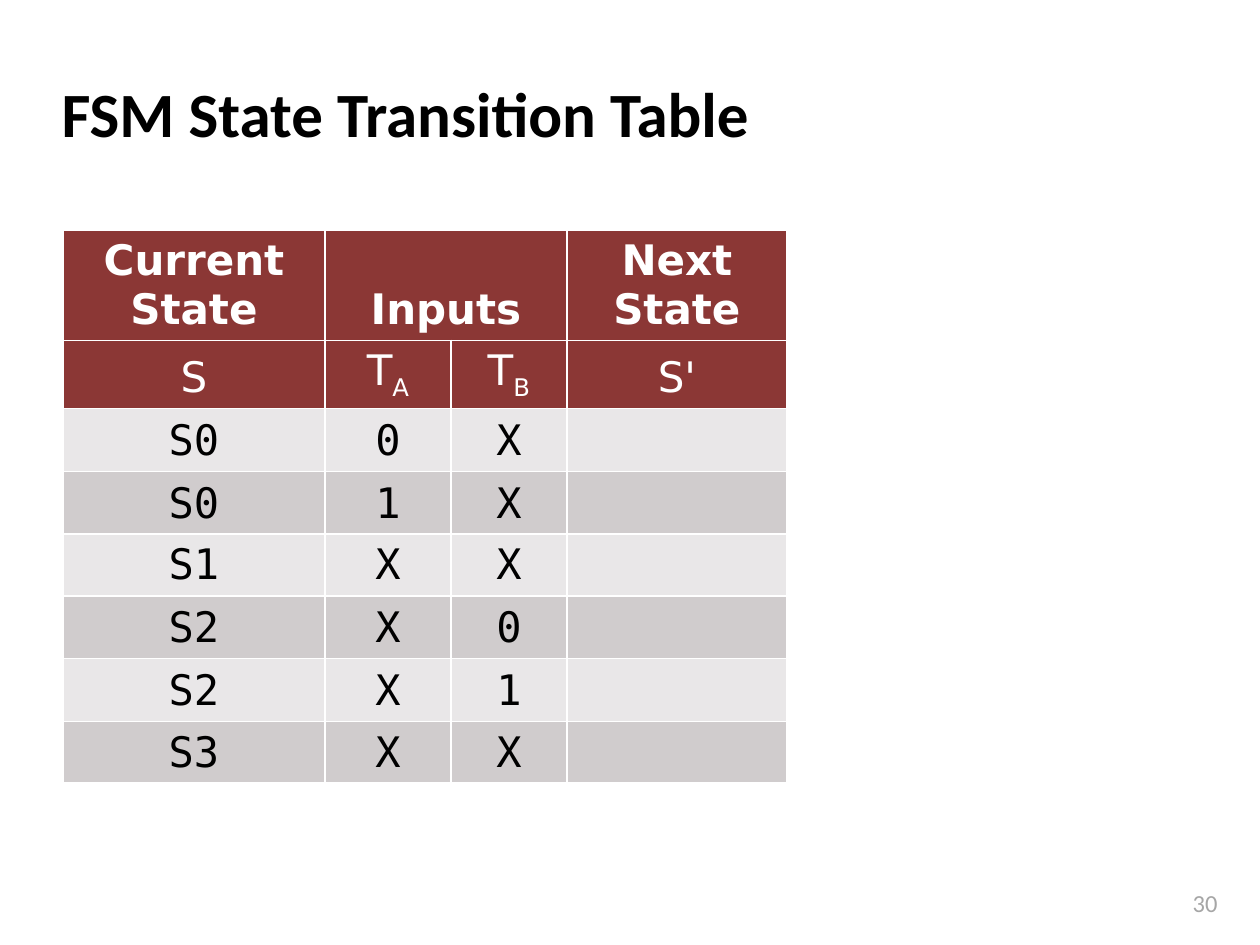
import pptx
import pptx.dml.color
import pptx.enum.text
import pptx.util

PX = 914400 // 126
ALIGN = pptx.enum.text.PP_ALIGN
ANCHOR = pptx.enum.text.MSO_ANCHOR


def color(hex_text):
    return pptx.dml.color.RGBColor.from_string(hex_text)


def add_span(para, text, ink, **formats):
    """Add a run to para, with its colour and the given font attributes."""
    span = para.add_run()
    span.text = text
    span.font.color.rgb = color(ink)
    for name, value in formats.items():
        setattr(span.font, name, value)
    return span


deck = pptx.Presentation()
deck.slide_width = 1260 * PX
deck.slide_height = 945 * PX
page = deck.slides.add_slide(deck.slide_layouts[5])

# Title
title = page.shapes.title
title_place = {"left": 49, "top": 60, "width": 1046, "height": 105}
for name, length in title_place.items():
    setattr(title, name, length * PX)
title.text_frame.vertical_anchor = ANCHOR.MIDDLE
title_para = title.text_frame.paragraphs[0]
title_para.alignment = ALIGN.LEFT
add_span(title_para, "FSM State Transition Table", "000000",
         name="Calibri", size=pptx.util.Pt(36), bold=True)

# State transition table
rows = [
    ["Current State", "Inputs", "", "Next State"],
    ["S", "TA", "TB", "S'"],
    ["S0", "0", "X", ""],
    ["S0", "1", "X", ""],
    ["S1", "X", "X", ""],
    ["S2", "X", "0", ""],
    ["S2", "X", "1", ""],
    ["S3", "X", "X", ""],
]
column_widths = [262, 126, 116, 220]
row_heights = [34, 43, 63, 63, 53, 63, 63, 53]
header_format = {"name": "DejaVu Sans", "size": pptx.util.Pt(24)}
state_format = {"name": "DejaVu Sans Mono", "size": pptx.util.Pt(24), "bold": False}

table_frame = page.shapes.add_table(
    len(rows), len(column_widths), 63 * PX, 230 * PX, 724 * PX, 505 * PX)
table = table_frame.table
for column, width in zip(table.columns, column_widths):
    column.width = width * PX
for row, height in zip(table.rows, row_heights):
    row.height = height * PX
table_frame.height = 505 * PX
table.cell(0, 1).merge(table.cell(0, 2))

for row_index, texts in enumerate(rows):
    is_header = row_index < 2
    if is_header:
        fill, ink = "8B3735", "FFFFFF"
        formats = {**header_format, "bold": row_index == 0}
    else:
        fill, ink = ("E9E7E8", "D0CCCD")[row_index % 2], "000000"
        formats = state_format
    for column_index, text in enumerate(texts):
        cell = table.cell(row_index, column_index)
        cell.fill.solid()
        cell.fill.fore_color.rgb = color(fill)
        cell.vertical_anchor = ANCHOR.BOTTOM
        if not text:
            continue
        para = cell.text_frame.paragraphs[0]
        para.alignment = ALIGN.CENTER
        if text in ("TA", "TB"):
            add_span(para, text[0], ink, **formats)
            subscript = add_span(para, text[1], ink, **formats)
            subscript.font._element.set("baseline", "-25000")
        else:
            add_span(para, text, ink, **formats)

# Page number
number_box = page.shapes.add_textbox(1134 * PX, 882 * PX, 96 * PX, 43 * PX)
number_box.text_frame.word_wrap = True
number_para = number_box.text_frame.paragraphs[0]
number_para.alignment = ALIGN.RIGHT
add_span(number_para, "30", "A6A6A6", name="Calibri", size=pptx.util.Pt(14))

deck.save("out.pptx")
